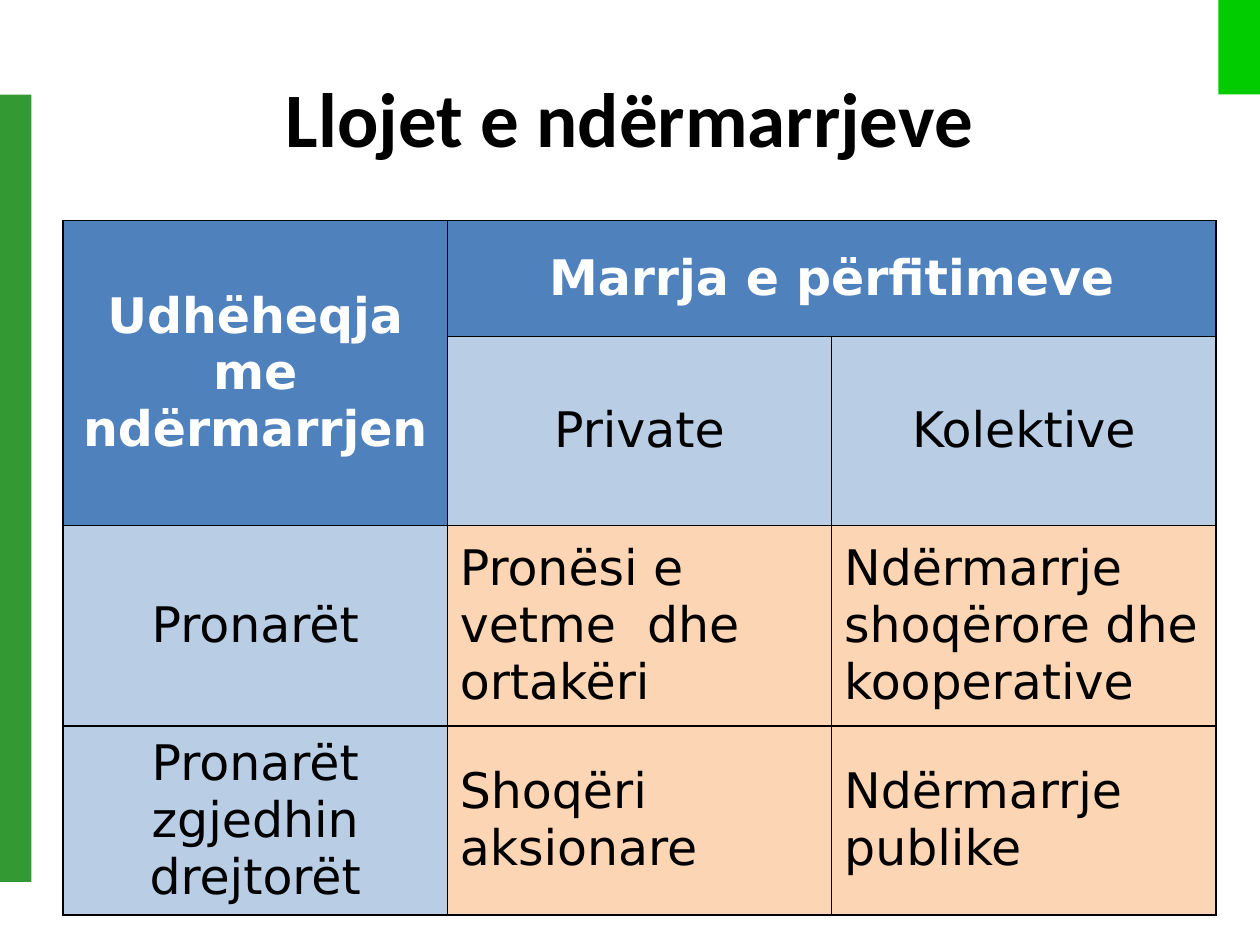
from dataclasses import dataclass

from lxml.etree import SubElement
from pptx import Presentation
from pptx.dml.color import RGBColor
from pptx.enum.shapes import MSO_SHAPE
from pptx.enum.text import MSO_ANCHOR, PP_ALIGN
from pptx.oxml.ns import qn
from pptx.slide import Slide
from pptx.table import Table, _Cell
from pptx.util import Inches, Pt

BLACK = RGBColor(0x00, 0x00, 0x00)
WHITE = RGBColor(0xFF, 0xFF, 0xFF)
DARK_GREEN = RGBColor(0x33, 0x99, 0x33)
BRIGHT_GREEN = RGBColor(0x00, 0xCC, 0x00)
HEADER_BLUE = RGBColor(0x4F, 0x81, 0xBD)
LABEL_BLUE = RGBColor(0xB9, 0xCD, 0xE5)
BODY_PEACH = RGBColor(0xFC, 0xD5, 0xB5)

COLUMN_WIDTH = 3.05
ROW_HEIGHTS = [0.92, 0.92, 1.59, 0.92]


@dataclass(frozen=True)
class Bar:
    left: float
    top: float
    width: float
    height: float
    color: RGBColor


@dataclass(frozen=True)
class CellStyle:
    fill: RGBColor
    color: RGBColor
    bold: bool
    align: PP_ALIGN


@dataclass(frozen=True)
class Entry:
    row: int
    column: int
    text: str
    style: CellStyle


HEADER = CellStyle(HEADER_BLUE, WHITE, True, PP_ALIGN.CENTER)
LABEL = CellStyle(LABEL_BLUE, BLACK, False, PP_ALIGN.CENTER)
BODY = CellStyle(BODY_PEACH, BLACK, False, PP_ALIGN.LEFT)

BARS = [
    Bar(0, 0.75, 0.25, 6.25, DARK_GREEN),
    Bar(9.67, 0, 0.33, 0.75, BRIGHT_GREEN),
]

ENTRIES = [
    Entry(0, 0, "Udhëheqja me ndërmarrjen", HEADER),
    Entry(0, 1, "Marrja e përfitimeve", HEADER),
    Entry(1, 1, "Private", LABEL),
    Entry(1, 2, "Kolektive", LABEL),
    Entry(2, 0, "Pronarët", LABEL),
    Entry(2, 1, "Pronësi e vetme  dhe ortakëri", BODY),
    Entry(2, 2, "Ndërmarrje shoqërore dhe kooperative", BODY),
    Entry(3, 0, "Pronarët zgjedhin drejtorët", LABEL),
    Entry(3, 1, "Shoqëri aksionare", BODY),
    Entry(3, 2, "Ndërmarrje publike", BODY),
]


def add_bar(page: Slide, bar: Bar) -> None:
    shape = page.shapes.add_shape(
        MSO_SHAPE.RECTANGLE, Inches(bar.left), Inches(bar.top),
        Inches(bar.width), Inches(bar.height))
    shape.shadow.inherit = False
    shape.fill.solid()
    shape.fill.fore_color.rgb = bar.color
    shape.line.fill.background()


def add_title(page: Slide, text: str) -> None:
    box = page.shapes.add_textbox(Inches(0.5), Inches(0.3), Inches(9), Inches(1.25))
    frame = box.text_frame
    frame.word_wrap = True
    frame.vertical_anchor = MSO_ANCHOR.MIDDLE
    para = frame.paragraphs[0]
    para.text = text
    para.alignment = PP_ALIGN.CENTER
    para.font.name = "Calibri"
    para.font.size = Pt(44)
    para.font.bold = True
    para.font.color.rgb = BLACK


def add_borders(cell: _Cell) -> None:
    properties = cell._tc.get_or_add_tcPr()
    for position, side in enumerate(("a:lnL", "a:lnR", "a:lnT", "a:lnB")):
        line = SubElement(properties, qn(side), w=str(Pt(1)))
        fill = SubElement(line, qn("a:solidFill"))
        SubElement(fill, qn("a:srgbClr"), val=str(BLACK))
        # Borders come before the fill in the cell properties
        properties.insert(position, line)


def fill_cell(table: Table, entry: Entry) -> None:
    cell = table.cell(entry.row, entry.column)
    style = entry.style
    cell.text = entry.text
    cell.vertical_anchor = MSO_ANCHOR.MIDDLE
    cell.fill.solid()
    cell.fill.fore_color.rgb = style.fill
    para = cell.text_frame.paragraphs[0]
    para.alignment = style.align
    para.font.name = "DejaVu Sans"
    para.font.size = Pt(28)
    para.font.bold = style.bold
    para.font.color.rgb = style.color


def add_enterprise_table(page: Slide) -> None:
    columns = 3
    table = page.shapes.add_table(
        len(ROW_HEIGHTS), columns, Inches(0.5), Inches(1.75),
        Inches(columns * COLUMN_WIDTH), Inches(sum(ROW_HEIGHTS))).table
    for column in table.columns:
        column.width = Inches(COLUMN_WIDTH)
    for row, height in zip(table.rows, ROW_HEIGHTS):
        row.height = Inches(height)

    # Merged headers
    table.cell(0, 0).merge(table.cell(1, 0))
    table.cell(0, 1).merge(table.cell(0, 2))

    for entry in ENTRIES:
        fill_cell(table, entry)
    for cell in table.iter_cells():
        add_borders(cell)


def main() -> None:
    deck = Presentation()
    deck.slide_width = Inches(10)
    deck.slide_height = Inches(7.5)
    page = deck.slides.add_slide(deck.slide_layouts[6])

    # Side and corner decoration
    for bar in BARS:
        add_bar(page, bar)

    # Title and table
    add_title(page, "Llojet e ndërmarrjeve")
    add_enterprise_table(page)

    deck.save("out.pptx")


if __name__ == "__main__":
    main()
